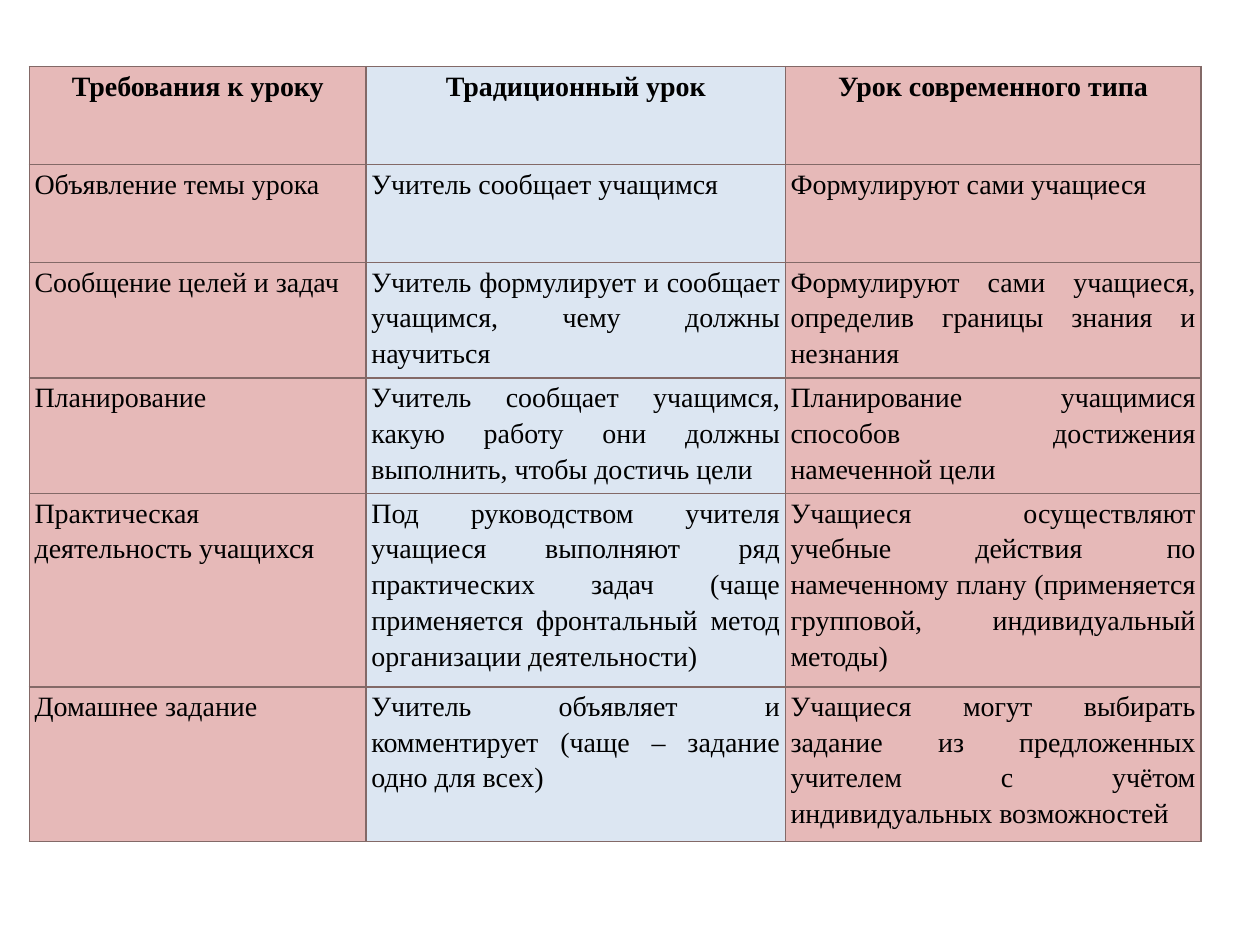
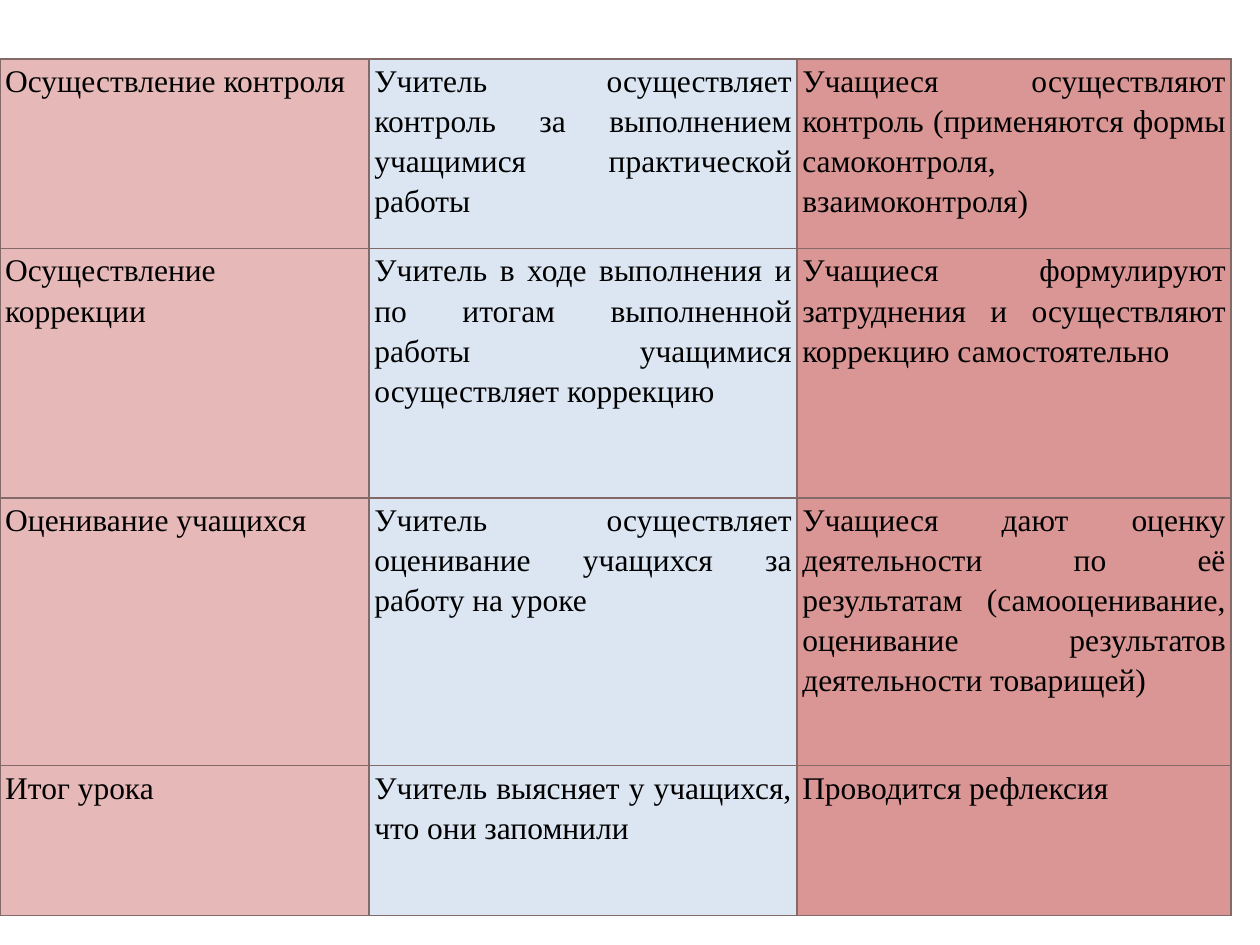
from dataclasses import dataclass

from lxml.etree import SubElement
from pptx import Presentation
from pptx.dml.color import RGBColor as RGB
from pptx.enum.text import PP_ALIGN as Align
from pptx.oxml.ns import qn
from pptx.util import Pt


@dataclass(frozen=True)
class Theme:
    """Colours, type sizes and spacing of the comparison tables."""
    font: str = "Times New Roman"
    text: str = "000000"
    border: str = "836967"
    pink: str = "E6B9B8"
    blue: str = "DCE6F2"
    rose: str = "D99694"
    size: int = 16
    large: int = 18
    line_spacing: float = 1.15
    border_width: int = 1
    inset: float = 3


T = Theme()

HEADER = ("Требования к уроку", "Традиционный урок", "Урок современного типа")

PREPARATION = [
    ("Объявление темы урока",
     "Учитель сообщает учащимся",
     "Формулируют сами учащиеся"),
    ("Сообщение целей и задач",
     "Учитель формулирует и сообщает учащимся, чему должны научиться",
     "Формулируют сами учащиеся, определив границы знания и незнания"),
    ("Планирование",
     "Учитель сообщает учащимся, какую работу они должны выполнить, чтобы достичь цели",
     "Планирование учащимися способов достижения намеченной цели"),
    ("Практическая деятельность учащихся",
     "Под руководством учителя учащиеся выполняют ряд практических задач "
     "(чаще применяется фронтальный метод организации деятельности)",
     "Учащиеся осуществляют учебные действия по намеченному плану "
     "(применяется групповой, индивидуальный методы)"),
    ("Домашнее задание",
     "Учитель объявляет и комментирует (чаще – задание одно для всех)",
     "Учащиеся могут выбирать задание из предложенных учителем "
     "с учётом индивидуальных возможностей"),
]

ASSESSMENT = [
    ("Осуществление контроля",
     "Учитель осуществляет контроль за выполнением учащимися практической работы",
     "Учащиеся осуществляют контроль (применяются формы самоконтроля, взаимоконтроля)"),
    ("Осуществление коррекции",
     "Учитель в ходе выполнения и по итогам выполненной работы учащимися "
     "осуществляет коррекцию",
     "Учащиеся формулируют затруднения и осуществляют коррекцию самостоятельно"),
    ("Оценивание учащихся",
     "Учитель осуществляет оценивание учащихся за работу на уроке",
     "Учащиеся дают оценку деятельности по её результатам (самооценивание, "
     "оценивание результатов деятельности товарищей)"),
    ("Итог урока",
     "Учитель выясняет у учащихся, что они запомнили",
     "Проводится рефлексия"),
]


def add_borders(cell):
    """Draw the four thin borders of a cell."""
    tc_pr = cell._tc.get_or_add_tcPr()
    for side in ("L", "R", "T", "B"):
        ln = SubElement(tc_pr, qn(f"a:ln{side}"), w=str(Pt(T.border_width)))
        fill = SubElement(ln, qn("a:solidFill"))
        SubElement(fill, qn("a:srgbClr"), val=T.border)


def fill_cell(cell, text, colour, size, heading):
    """Write and colour one cell."""
    add_borders(cell)
    cell.fill.solid()
    cell.fill.fore_color.rgb = RGB.from_string(colour)
    cell.margin_left = cell.margin_right = Pt(T.inset)
    cell.margin_top = cell.margin_bottom = 0
    p = cell.text_frame.paragraphs[0]
    p.alignment = Align.CENTER if heading else Align.JUSTIFY
    p.line_spacing = T.line_spacing
    r = p.add_run()
    r.text = text
    r.font.name = T.font
    r.font.size = Pt(size)
    r.font.bold = heading
    r.font.color.rgb = RGB.from_string(T.text)


def add_comparison(prs, rows, left, top, widths, heights, colours, size):
    """Add a slide with a lesson comparison table."""
    s = prs.slides.add_slide(prs.slide_layouts[6])
    table = s.shapes.add_table(len(rows), len(widths), Pt(left), Pt(top),
                               Pt(sum(widths)), Pt(sum(heights))).table
    table.first_row = table.horz_banding = False
    for column, width in zip(table.columns, widths):
        column.width = Pt(width)
    for row, height, texts in zip(table.rows, heights, rows):
        row.height = Pt(height)
        for cell, text, colour in zip(row.cells, texts, colours):
            fill_cell(cell, text, colour, size, texts is HEADER)


def main():
    """Build both slides and save the presentation."""
    prs = Presentation()
    prs.slide_width, prs.slide_height = Pt(720), Pt(540)
    add_comparison(prs, [HEADER, *PREPARATION], 16.8, 38,
                   (192.5, 239.5, 237.5), (56, 56, 66, 66, 110.5, 88.5),
                   (T.pink, T.blue, T.pink), T.size)
    add_comparison(prs, ASSESSMENT, 0, 33.6,
                   (211, 244.5, 248), (108.5, 142.5, 153, 85.5),
                   (T.pink, T.blue, T.rose), T.large)
    prs.save("out.pptx")


if __name__ == "__main__":
    main()
